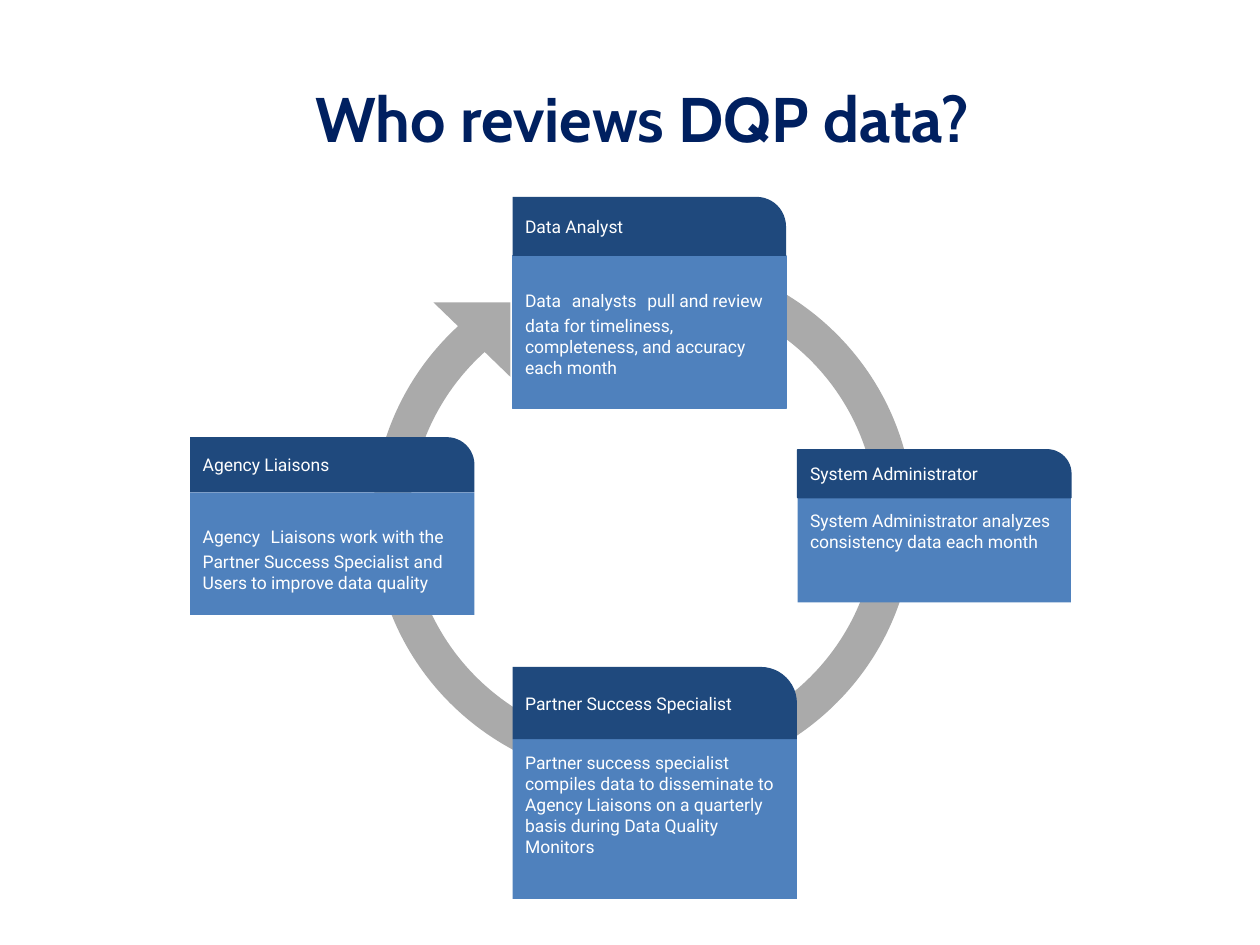
"""Build a slide showing the cycle of people who review DQP data."""
from dataclasses import dataclass

from pptx import Presentation
from pptx.dml.color import RGBColor
from pptx.enum.shapes import MSO_SHAPE as Shape
from pptx.enum.text import MSO_ANCHOR as Anchor, MSO_AUTO_SIZE as AutoSize, PP_ALIGN as Align
from pptx.util import Pt

TITLE = "Who reviews DQP data?"
TITLE_BOX = (43.2, 22.3, 648, 90)
RING_BOX = (213.1, 145.4, 308.9, 301.7)
RING_ADJUSTMENTS = (54, 30.13, 0.07)
ARROW_BOX = (247.7, 172.8, 43.9, 42.5)

ROLES = [
    {"name": "System Administrator", "left": 455.8, "top": 257, "width": 156.2,
     "header": 27.4, "body": 59.8, "outlined": "header",
     "pieces": ["System Administrator analyzes consistency data each month"]},
    {"name": "Data Analyst", "left": 293, "top": 112.5, "width": 156.2,
     "header": 33.8, "body": 87.1, "outlined": "body",
     "pieces": ["Data", "analysts", "pull and review data for timeliness, "
                "completeness, and accuracy each month"]},
    {"name": "Agency Liaisons", "left": 108.7, "top": 249.8, "width": 162.4,
     "header": 31.5, "body": 70.1, "outlined": None,
     "pieces": ["Agency", "Liaisons work with the Partner Success Specialist "
                "and Users to improve data quality"]},
    {"name": "Partner Success Specialist", "left": 293, "top": 381.1, "width": 162.4,
     "header": 41.3, "body": 91.3, "outlined": None,
     "pieces": ["Partner success specialist compiles data to disseminate to Agency "
                "Liaisons on a quarterly basis during Data Quality Monitors"]},
]


@dataclass(frozen=True)
class Theme:
    """Colours, fonts and sizes of the slide."""
    title: str = "002060"
    header: str = "1F497D"
    body: str = "4F81BD"
    ring: str = "AAAAAA"
    text: str = "FFFFFF"
    gap: str = "000000"
    title_font: str = "Cabin"
    text_font: str = "Roboto"
    gap_font: str = "Arial"
    title_size: float = 36
    text_size: float = 10
    gap_size: float = 22
    inset: float = 7.2
    outline: float = 0.75


THEME = Theme()


def style_run(run, font_name, size, color, bold=False):
    """Set the font of one run."""
    run.font.name = font_name
    run.font.size = Pt(size)
    run.font.bold = bold
    run.font.color.rgb = RGBColor.from_string(color)


def add_filled(slide, kind, box, color, outlined=False):
    """Add a flat shape, outlined in its own colour if asked."""
    shape = slide.shapes.add_shape(kind, *map(Pt, box))
    shape.shadow.inherit = False
    shape.fill.solid()
    shape.fill.fore_color.rgb = RGBColor.from_string(color)
    if outlined:
        shape.line.color.rgb = RGBColor.from_string(color)
        shape.line.width = Pt(THEME.outline)
    else:
        shape.line.fill.background()
    return shape


def write(shape, pieces, anchor):
    """Write the pieces as one paragraph with a large space between them."""
    frame = shape.text_frame
    frame.word_wrap = True
    frame.vertical_anchor = anchor
    frame.margin_left = frame.margin_right = Pt(THEME.inset)
    frame.margin_top = frame.margin_bottom = Pt(THEME.inset)
    paragraph = frame.paragraphs[0]
    paragraph.alignment = Align.LEFT
    for index, piece in enumerate(pieces):
        if index:
            gap = paragraph.add_run()
            gap.text = " "
            style_run(gap, THEME.gap_font, THEME.gap_size, THEME.gap)
        run = paragraph.add_run()
        run.text = piece
        style_run(run, THEME.text_font, THEME.text_size, THEME.text)


def add_title(slide):
    """Place and format the title placeholder."""
    title = slide.shapes.title
    title.left, title.top, title.width, title.height = map(Pt, TITLE_BOX)
    frame = title.text_frame
    frame.text = TITLE
    frame.auto_size = AutoSize.NONE
    frame.vertical_anchor = Anchor.MIDDLE
    paragraph = frame.paragraphs[0]
    paragraph.alignment = Align.CENTER
    style_run(paragraph.runs[0], THEME.title_font, THEME.title_size, THEME.title, bold=True)


def add_ring(slide):
    """Draw the circular arrow behind the cards."""
    ring = add_filled(slide, Shape.BLOCK_ARC, RING_BOX, THEME.ring)
    for index, value in enumerate(RING_ADJUSTMENTS):
        ring.adjustments[index] = value
    arrow = add_filled(slide, Shape.RIGHT_TRIANGLE, ARROW_BOX, THEME.ring)
    ring.rotation = arrow.rotation = 180


def add_card(slide, role):
    """Draw a role card: the body with its header above."""
    left, top, width = role["left"], role["top"], role["width"]
    body_box = (left, top + role["header"], width, role["body"])
    body = add_filled(slide, Shape.RECTANGLE, body_box, THEME.body, role["outlined"] == "body")
    write(body, role["pieces"], Anchor.TOP)
    header_box = (left, top, width, role["header"])
    header = add_filled(slide, Shape.ROUND_1_RECTANGLE, header_box, THEME.header,
                        role["outlined"] == "header")
    header.adjustments[0] = 0.5
    write(header, [role["name"]], Anchor.MIDDLE)


def main():
    """Build and save the presentation."""
    presentation = Presentation()
    presentation.slide_width, presentation.slide_height = Pt(720), Pt(540)
    slide = presentation.slides.add_slide(presentation.slide_layouts[5])
    add_title(slide)
    add_ring(slide)
    for role in ROLES:
        add_card(slide, role)
    presentation.save("out.pptx")


if __name__ == "__main__":
    main()
